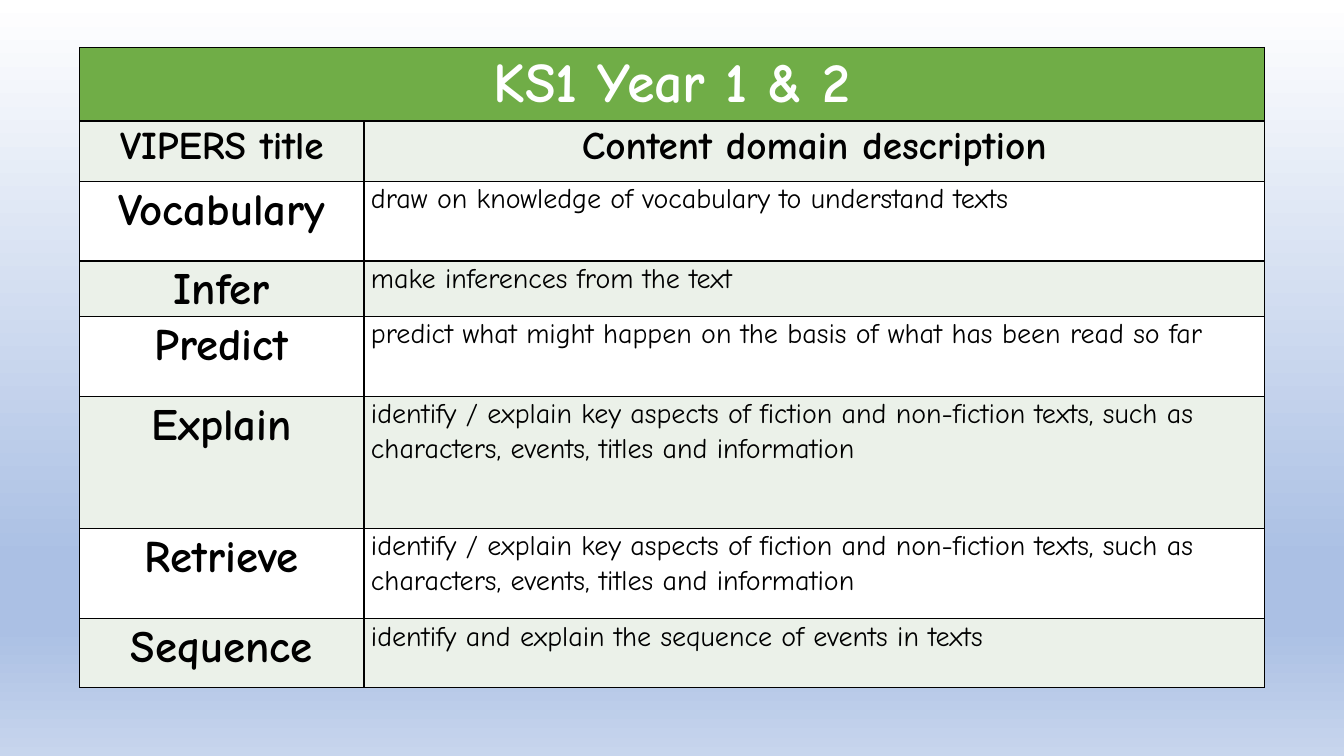
from lxml import etree
from pptx import Presentation
from pptx import util as u
from pptx.dml.color import RGBColor
from pptx.enum import text
from pptx.oxml.ns import qn

FONT = "Comic Neue"
ASPECTS = ("identify / explain key aspects of fiction and non-fiction texts, "
           "such as characters, events, titles and information")
TITLE = "KS1 Year 1 & 2"
HEADINGS = ("VIPERS title", "Content domain description")
DOMAINS = [
    ("Vocabulary", "draw on knowledge of vocabulary to understand texts"),
    ("Infer", "make inferences from the text"),
    ("Predict", "predict what might happen on the basis of what has been read so far"),
    ("Explain", ASPECTS),
    ("Retrieve", ASPECTS),
    ("Sequence", "identify and explain the sequence of events in texts"),
]
COLUMNS = (2.82, 8.93)
ROWS = (0.73, 0.6, 0.79, 0.55, 0.79, 1.31, 0.9, 0.68)
LEFT, TOP = 0.79, 0.47
BACKGROUND = ((0, "FFFFFF"), (74, "ABC0E4"), (83, "ABC0E4"), (100, "C7D5ED"))
BANDS = ("FFFFFF", "EBF1E9")
CENTER, START = text.PP_ALIGN.CENTER, text.PP_ALIGN.LEFT
TITLE_STYLE = {"size": 40, "bold": True, "color": "FFFFFF", "align": CENTER}
HEADING_STYLE = {"size": 28, "bold": True, "color": "000000", "align": CENTER}
NAME_STYLE = {**HEADING_STYLE, "size": 32}
DETAIL_STYLE = {"size": 20, "bold": False, "color": "000000", "align": START}
MARGINS = {"margin_left": 0.07, "margin_right": 0.07, "margin_top": 0, "margin_bottom": 0}


def rgb(value):
    """Turn a hex string into a colour."""
    return RGBColor.from_string(value)


def paint_background(page):
    """Fill the page with a vertical gradient."""
    fill = page.background.fill
    fill.gradient()
    fill.gradient_angle = 270
    stops = next(page.element.iter(qn("a:gsLst")))
    for stop in list(stops):
        stops.remove(stop)
    for share, value in BACKGROUND:
        stop = etree.SubElement(stops, qn("a:gs"), pos=str(share * 1000))
        etree.SubElement(stop, qn("a:srgbClr"), val=value)


def add_borders(cell):
    """Draw a thin black line on each side of a cell."""
    properties = cell._tc.get_or_add_tcPr()
    for side in ("lnL", "lnR", "lnT", "lnB"):
        line = etree.SubElement(properties, qn("a:" + side), w=str(u.Pt(1)))
        solid = etree.SubElement(line, qn("a:solidFill"))
        etree.SubElement(solid, qn("a:srgbClr"), val="000000")


def format_cell(cell, fill):
    """Set the borders, margins and fill of a cell."""
    add_borders(cell)
    for name, value in MARGINS.items():
        setattr(cell, name, u.Inches(value))
    cell.fill.solid()
    cell.fill.fore_color.rgb = rgb(fill)


def write(cell, words, style):
    """Put styled words in a cell."""
    para = cell.text_frame.paragraphs[0]
    para.alignment, para.line_spacing = style["align"], 1.07
    span = para.add_run()
    span.text = words
    for name, value in {"name": FONT, "size": u.Pt(style["size"]), "bold": style["bold"]}.items():
        setattr(span.font, name, value)
    span.font.color.rgb = rgb(style["color"])


def add_domains(page):
    """Build the table of reading domains."""
    frame = page.shapes.add_table(len(ROWS), len(COLUMNS), *map(
        u.Inches, (LEFT, TOP, sum(COLUMNS), sum(ROWS))))
    table = frame.table
    for column, width in zip(table.columns, COLUMNS):
        column.width = u.Inches(width)
    for index, height in enumerate(ROWS):
        table.rows[index].height = u.Inches(height)
        for cell in table.rows[index].cells:
            format_cell(cell, BANDS[index % 2] if index else "70AD47")
    table.cell(0, 0).merge(table.cell(0, 1))
    write(table.cell(0, 0), TITLE, TITLE_STYLE)
    for index, words in enumerate([HEADINGS] + DOMAINS, 1):
        styles = (NAME_STYLE, DETAIL_STYLE) if index > 1 else (HEADING_STYLE, HEADING_STYLE)
        for cell, phrase, style in zip(table.rows[index].cells, words, styles):
            write(cell, phrase, style)


def main():
    """Build and save the slide."""
    deck = Presentation()
    deck.slide_width, deck.slide_height = u.Inches(13.33), u.Inches(7.5)
    page = deck.slides.add_slide(deck.slide_layouts[6])
    paint_background(page)
    add_domains(page)
    deck.save("out.pptx")


if __name__ == "__main__":
    main()
